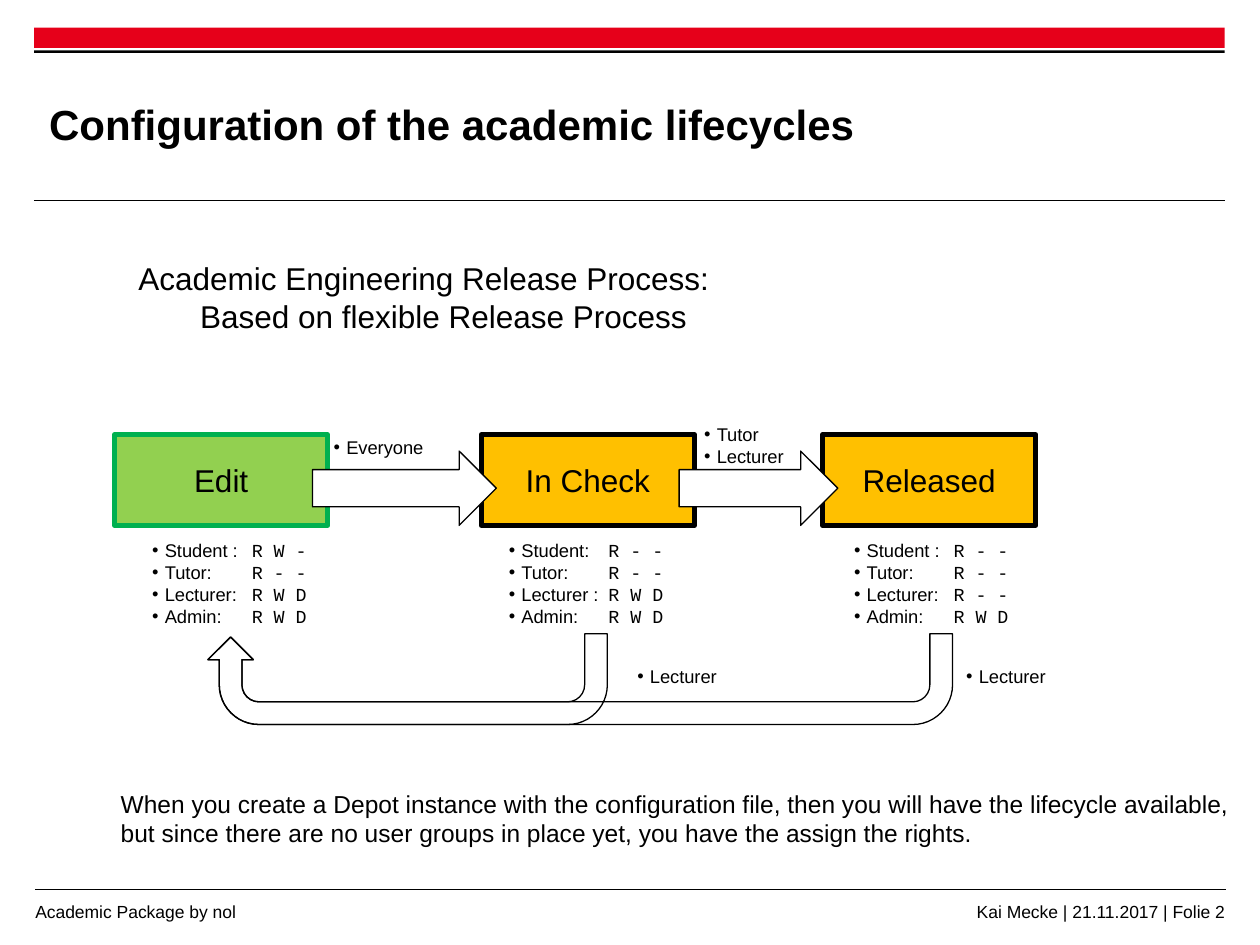
from lxml.etree import SubElement
from pptx import Presentation
from pptx.dml.color import RGBColor
from pptx.enum.shapes import MSO_CONNECTOR, MSO_SHAPE
from pptx.enum.text import MSO_ANCHOR, PP_ALIGN
from pptx.oxml.ns import qn
from pptx.util import Inches, Pt

WIDE, HIGH = 10, 7.5
EDGE, SPAN = 0.27, 9.45
BLACK, WHITE = "000000", "FFFFFF"
SANS, MONO = "Arial", "Courier New"

TITLE = "Configuration of the academic lifecycles"
INTRO = "Academic Engineering Release Process: \n\tBased on flexible Release Process"
NOTE = ("When you create a Depot instance with the configuration file, "
        "then you will have the lifecycle available, \n"
        "but since there are no user groups in place yet, you have the assign the rights.")
FEET = [("Academic Package by nol", 0.28, PP_ALIGN.LEFT),
        ("Kai Mecke | 21.11.2017 | Folie 2", 7.23, PP_ALIGN.RIGHT)]
STATES = [
    ("Edit", 0.91, "92D050", "00B050", 1.11,
     [("Student : ", "R W -"), ("Tutor:", "R - -"),
      ("Lecturer: ", "R W D"), ("Admin: ", "R W D")]),
    ("In Check", 3.82, "FFC000", BLACK, 3.94,
     [("Student: ", "R - -"), ("Tutor:", "R - -"),
      ("Lecturer : ", "R W D"), ("Admin: ", "R W D")]),
    ("Released", 6.53, "FFC000", BLACK, 6.68,
     [("Student : ", "R - -"), ("Tutor:", "R - -"),
      ("Lecturer: ", "R - -"), ("Admin: ", "R W D")]),
]
ROLES = [
    (["Lecturer"], 4.96, 5.23, 0.93, 0.28),
    (["Lecturer"], 7.57, 5.23, 0.94, 0.28),
    (["Tutor", "Lecturer"], 5.49, 3.31, 0.88, 0.45),
    (["Everyone"], 2.55, 3.41, 0.92, 0.28),
]
BOX_TOP, BOX_WIDE, BOX_HIGH = 3.45, 1.69, 0.72
LAP = 0.12
BACK_LEFT, BACK_TOP = 1.65, 5.03
BACK_ENDS = [4.82, 7.56]
BEND = [0.25, 0.25, 0.25, 0.438, 0.965]

deck = Presentation()
deck.slide_width, deck.slide_height = Inches(WIDE), Inches(HIGH)
slide = deck.slides.add_slide(deck.slide_layouts[6])


def paint(color):
    return RGBColor.from_string(color)


def place(*sizes):
    return [Inches(size) for size in sizes]


def shape(kind, area, fill=None, line=None, width=0.75):
    item = slide.shapes.add_shape(kind, *place(*area))
    item.shadow.inherit = False
    if fill:
        item.fill.solid()
        item.fill.fore_color.rgb = paint(fill)
    else:
        item.fill.background()
    if line:
        item.line.color.rgb = paint(line)
        item.line.width = Pt(width)
    else:
        item.line.fill.background()
    return item


def rule(y, left):
    line = slide.shapes.add_connector(
        MSO_CONNECTOR.STRAIGHT, *place(left, y, left + SPAN, y))
    line.line.color.rgb = paint(BLACK)
    line.line.width = Pt(0.6)
    SubElement(line.element.spPr, qn("a:effectLst"))


def write(area, rows, size, bold=False, align=PP_ALIGN.LEFT, anchor=MSO_ANCHOR.TOP,
          bare=False, wrap=True, bullet=False, tab=None, host=None):
    item = host or slide.shapes.add_textbox(*place(*area))
    frame = item.text_frame
    frame.word_wrap = wrap
    frame.vertical_anchor = anchor
    if bare:
        frame.margin_left = frame.margin_right = 0
        frame.margin_top = frame.margin_bottom = 0
    for i, row in enumerate(rows):
        para = frame.paragraphs[0] if i == 0 else frame.add_paragraph()
        para.alignment = align
        props = para._p.get_or_add_pPr()
        if bullet:
            props.set("marL", str(Inches(0.1)))
            props.set("indent", str(Inches(-0.1)))
            SubElement(props, qn("a:buFont"), typeface=SANS)
            SubElement(props, qn("a:buChar"), char="•")
        if tab:
            stops = SubElement(props, qn("a:tabLst"))
            SubElement(stops, qn("a:tab"), pos=str(Inches(tab)), algn="l")
        parts = [(row, SANS)] if isinstance(row, str) else row
        for text, face in parts:
            for j, piece in enumerate(text.split("\n")):
                if j:
                    para.add_line_break()
                run = para.add_run()
                run.text = piece
                run.font.name, run.font.size = face, Pt(size)
                run.font.bold = bold
                run.font.color.rgb = paint(BLACK)


shape(MSO_SHAPE.RECTANGLE, (EDGE, 0.22, SPAN, 0.16), "E6001A")
shape(MSO_SHAPE.RECTANGLE, (EDGE, 0.4, SPAN, 0.02), BLACK)
rule(1.59, EDGE)
rule(7.06, EDGE + 0.01)
for text, left, align in FEET:
    write((left, 7.15, 2.49, 0.23), [text], 10, align=align, bare=True)
write((0.39, 0.53, 7.52, 0.91), [TITLE], 24, bold=True,
      anchor=MSO_ANCHOR.MIDDLE, bare=True)
write((1, 2.01, 4.84, 0.71), [INTRO], 18, wrap=False, tab=0.49)

for name, left, fill, line, *rest in STATES:
    box = shape(MSO_SHAPE.RECTANGLE, (left, BOX_TOP, BOX_WIDE, BOX_HIGH), fill, line, 3)
    write(None, [name], 18, align=PP_ALIGN.CENTER, anchor=MSO_ANCHOR.MIDDLE, host=box)

for here, after in zip(STATES, STATES[1:]):
    start = here[1] + BOX_WIDE - LAP
    shape(MSO_SHAPE.RIGHT_ARROW, (start, 3.58, after[1] + LAP - start, 0.59), WHITE, BLACK)

for *rest, left, rights in STATES:
    rows = [[(role + "\t", SANS), (code, MONO)] for role, code in rights]
    write((left, 4.22, 1.75, 0.81), rows, 10.5, anchor=MSO_ANCHOR.MIDDLE,
          bullet=True, tab=0.79)

for end in BACK_ENDS:
    turn = shape(MSO_SHAPE.U_TURN_ARROW,
                 (BACK_LEFT, BACK_TOP, end - BACK_LEFT, BOX_HIGH), line=BLACK)
    turn.rotation = 180
    for i, bend in enumerate(BEND):
        turn.adjustments[i] = bend

for names, *area in ROLES:
    write(area, names, 10.5, anchor=MSO_ANCHOR.MIDDLE, bullet=True)
write((0.86, 6.21, 9.1, 0.57), [NOTE], 14, wrap=False)

deck.save("out.pptx")
